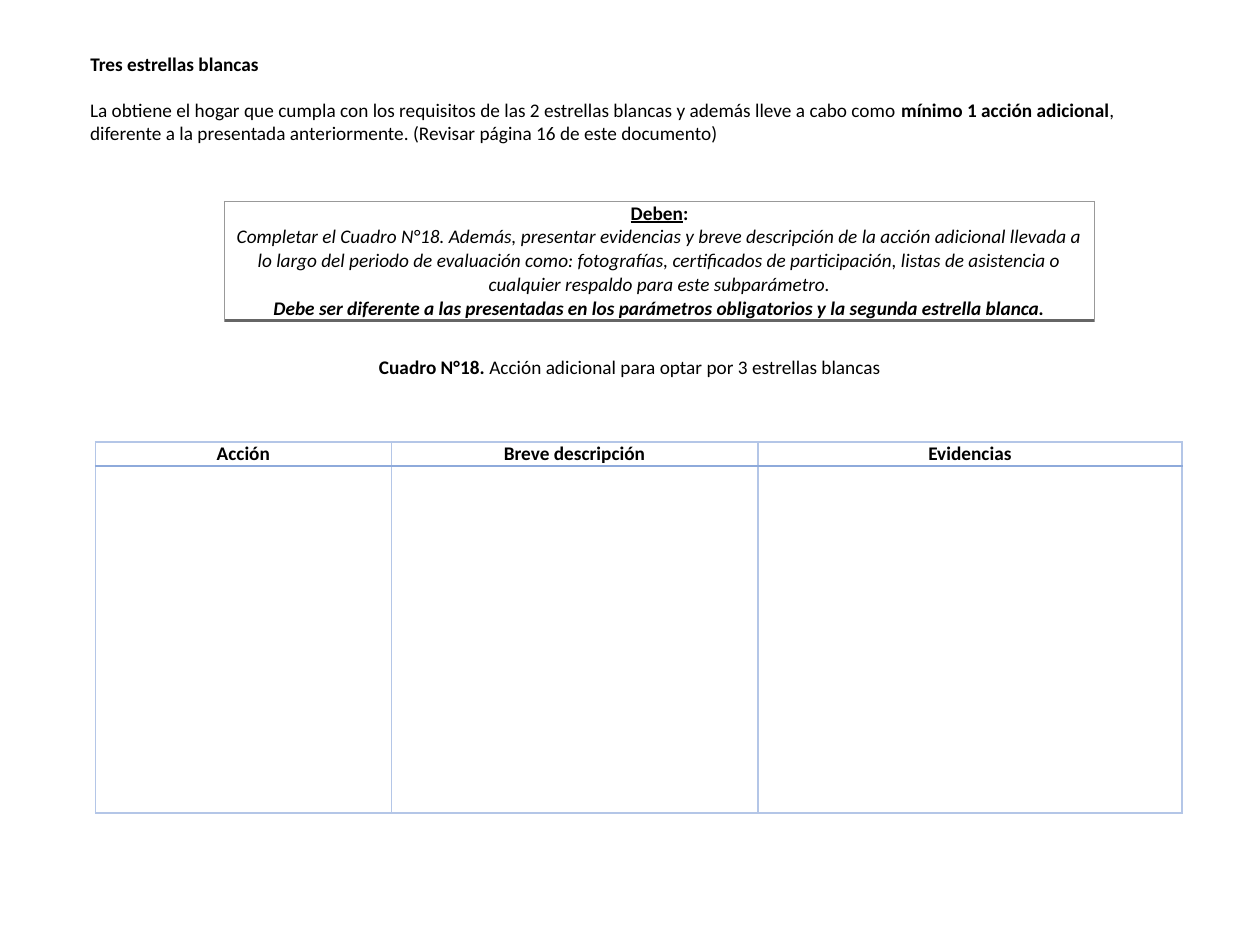
"""Build the slide on the requirements for three white stars."""
import lxml.etree
import pptx
import pptx.dml.color
import pptx.enum.text
import pptx.oxml.ns
import pptx.util

Pt = pptx.util.Pt
ALIGN = pptx.enum.text.PP_ALIGN
ANCHOR = pptx.enum.text.MSO_ANCHOR


def write_text(frame, paragraphs, align=ALIGN.LEFT, anchor=ANCHOR.TOP, size=11, color="000000"):
    """Write paragraphs, each a list of (text, styles) with styles from b, i and u."""
    frame.word_wrap = True
    frame.vertical_anchor = anchor
    for index, runs in enumerate(paragraphs):
        paragraph = frame.paragraphs[0] if index == 0 else frame.add_paragraph()
        paragraph.alignment = align
        for text, styles in runs:
            run = paragraph.add_run()
            run.text = text
            run.font.name = "Calibri"
            run.font.size = Pt(size)
            run.font.color.rgb = pptx.dml.color.RGBColor.from_string(color)
            run.font.bold = "b" in styles
            run.font.italic = "i" in styles
            run.font.underline = "u" in styles


def format_cell(cell, borders):
    """Clear the fill and draw borders given as (color, width) for left, right, top, bottom."""
    cell.margin_left = cell.margin_right = Pt(5)
    cell.margin_top = cell.margin_bottom = 0
    cell.fill.background()
    properties = cell._tc.get_or_add_tcPr()
    for index, (side, (color, width)) in enumerate(zip("LRTB", borders)):
        line = lxml.etree.Element(pptx.oxml.ns.qn(f"a:ln{side}"), w=str(Pt(width)))
        fill = lxml.etree.SubElement(line, pptx.oxml.ns.qn("a:solidFill"))
        lxml.etree.SubElement(fill, pptx.oxml.ns.qn("a:srgbClr"), val=color)
        properties.insert(index, line)


presentation = pptx.Presentation()
presentation.slide_width = Pt(720)
presentation.slide_height = Pt(540)
slide = presentation.slides.add_slide(presentation.slide_layouts[5])

title = slide.shapes.title
title.left, title.top, title.width, title.height = Pt(44.4), Pt(26.3), Pt(631.4), Pt(21)
title.text_frame.auto_size = pptx.enum.text.MSO_AUTO_SIZE.NONE
write_text(title.text_frame, [[("Tres estrellas blancas", "b")]])

requirement = slide.shapes.add_textbox(Pt(44.4), Pt(52.6), Pt(631.4), Pt(34))
write_text(requirement.text_frame, [[
    ("La obtiene el hogar que cumpla con los requisitos de las 2 estrellas blancas "
     "y además lleve a cabo como ", ""),
    ("mínimo 1 acción adicional", "b"),
    (", diferente a la presentada anteriormente. (Revisar página 16 de este documento)", ""),
]])

instructions = slide.shapes.add_table(1, 1, Pt(128.4), Pt(115.2), Pt(497), Pt(68)).table
instructions.first_row = instructions.horz_banding = False
cell = instructions.cell(0, 0)
format_cell(cell, [("999999", 1)] * 3 + [("666666", 1.5)])
write_text(cell.text_frame, [
    [("Deben", "bu"), (":", "b")],
    [("Completar el Cuadro N°18. Además, presentar evidencias y breve descripción de la acción "
      "adicional llevada a lo largo del periodo de evaluación como: fotografías, certificados de "
      "participación, listas de asistencia o cualquier respaldo para este subparámetro.", "i")],
    [("Debe ser diferente a las presentadas en los parámetros obligatorios y la segunda "
      "estrella blanca.", "bi")],
], align=ALIGN.CENTER)

caption = slide.shapes.add_textbox(Pt(180), Pt(199.6), Pt(360), Pt(21))
write_text(caption.text_frame, [[
    ("Cuadro N°18. ", "b"),
    ("Acción adicional para optar por 3 estrellas blancas", ""),
]], align=ALIGN.CENTER)

columns = [("Acción", 169), ("Breve descripción", 209.5), ("Evidencias", 242.5)]
actions = slide.shapes.add_table(2, len(columns), Pt(54.6), Pt(252.7), Pt(621), Pt(212)).table
actions.first_row = actions.horz_banding = False
actions.rows[0].height = Pt(13.7)
actions.rows[1].height = Pt(198.3)
light, strong = ("B4C6E7", 1), ("8EAADB", 1.5)
for index, (heading, width) in enumerate(columns):
    actions.columns[index].width = Pt(width)
    header = actions.cell(0, index)
    format_cell(header, [light, light, light, strong])
    write_text(header.text_frame, [[(heading, "b")]], align=ALIGN.CENTER, anchor=ANCHOR.MIDDLE)
    format_cell(actions.cell(1, index), [light, light, strong, light])

presentation.save("out.pptx")
